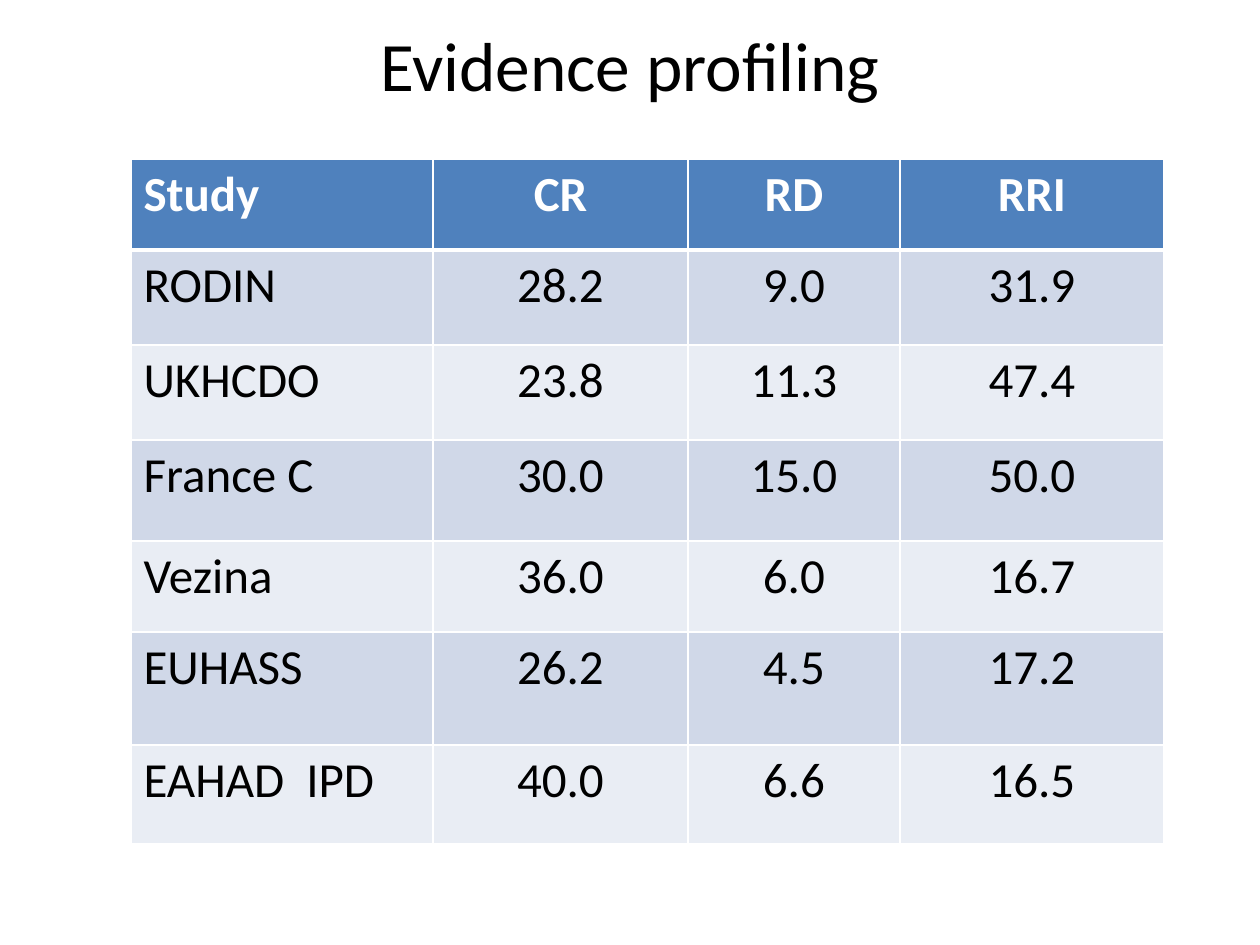
from lxml.etree import SubElement
from pptx import Presentation
from pptx.dml.color import RGBColor
from pptx.enum.text import MSO_ANCHOR, PP_ALIGN
from pptx.oxml.ns import qn
from pptx.util import Pt

# Content
TITLE = "Evidence profiling"
ROWS = [
    ("Study", "CR", "RD", "RRI"),
    ("RODIN", "28.2", "9.0", "31.9"),
    ("UKHCDO", "23.8", "11.3", "47.4"),
    ("France C", "30.0", "15.0", "50.0"),
    ("Vezina", "36.0", "6.0", "16.7"),
    ("EUHASS", "26.2", "4.5", "17.2"),
    ("EAHAD  IPD", "40.0", "6.6", "16.5"),
]

# Layout in px, 126 to the inch
WIDTHS = [302, 255, 212, 264]
HEIGHTS = [91, 95, 95, 101, 91, 113, 99]
LEFT, TOP = 131, 159
FONT = "Calibri"
COLORS = {"text": "000000", "head": "4F81BD", "odd": "D0D8E8",
          "even": "E9EDF4", "line": "FFFFFF"}


def px(n):
    return round(n * 914400 / 126)


def color(name):
    return RGBColor.from_string(COLORS[name])


def write(frame, text, size, tint, align, bold=False):
    para = frame.paragraphs[0]
    para.alignment = align
    run = para.add_run()
    run.text = text
    run.font.name = FONT
    run.font.size = Pt(size)
    run.font.bold = bold
    run.font.color.rgb = color(tint)


def border(cell, side, width):
    props = cell._tc.get_or_add_tcPr()
    line = SubElement(props, qn(f"a:ln{side}"), w=str(Pt(width)))
    fill = SubElement(line, qn("a:solidFill"))
    SubElement(fill, qn("a:srgbClr"), val=COLORS["line"])


deck = Presentation()
deck.slide_width, deck.slide_height = px(1260), px(945)
slide = deck.slides.add_slide(deck.slide_layouts[6])

# Title
box = slide.shapes.add_textbox(px(63), px(20), px(1134), px(87))
box.text_frame.word_wrap = True
box.text_frame.vertical_anchor = MSO_ANCHOR.MIDDLE
write(box.text_frame, TITLE, 39.6, "text", PP_ALIGN.CENTER)

# Table grid
table = slide.shapes.add_table(
    len(ROWS), len(WIDTHS), px(LEFT), px(TOP),
    px(sum(WIDTHS)), px(sum(HEIGHTS))).table
for col, width in zip(table.columns, WIDTHS):
    col.width = px(width)
for row, height in zip(table.rows, HEIGHTS):
    row.height = px(height)

# Table cells: header, then alternate bands
for r, values in enumerate(ROWS):
    head = r == 0
    band = "head" if head else "odd" if r % 2 else "even"
    for c, value in enumerate(values):
        cell = table.cell(r, c)
        sides = {"L": 1, "R": 1, "T": 3 if r == 1 else 1, "B": 3 if head else 1}
        for side, width in sides.items():
            border(cell, side, width)
        cell.fill.solid()
        cell.fill.fore_color.rgb = color(band)
        write(cell.text_frame, value, 28, "line" if head else "text",
              PP_ALIGN.CENTER if c else PP_ALIGN.LEFT, head)

deck.save("out.pptx")
